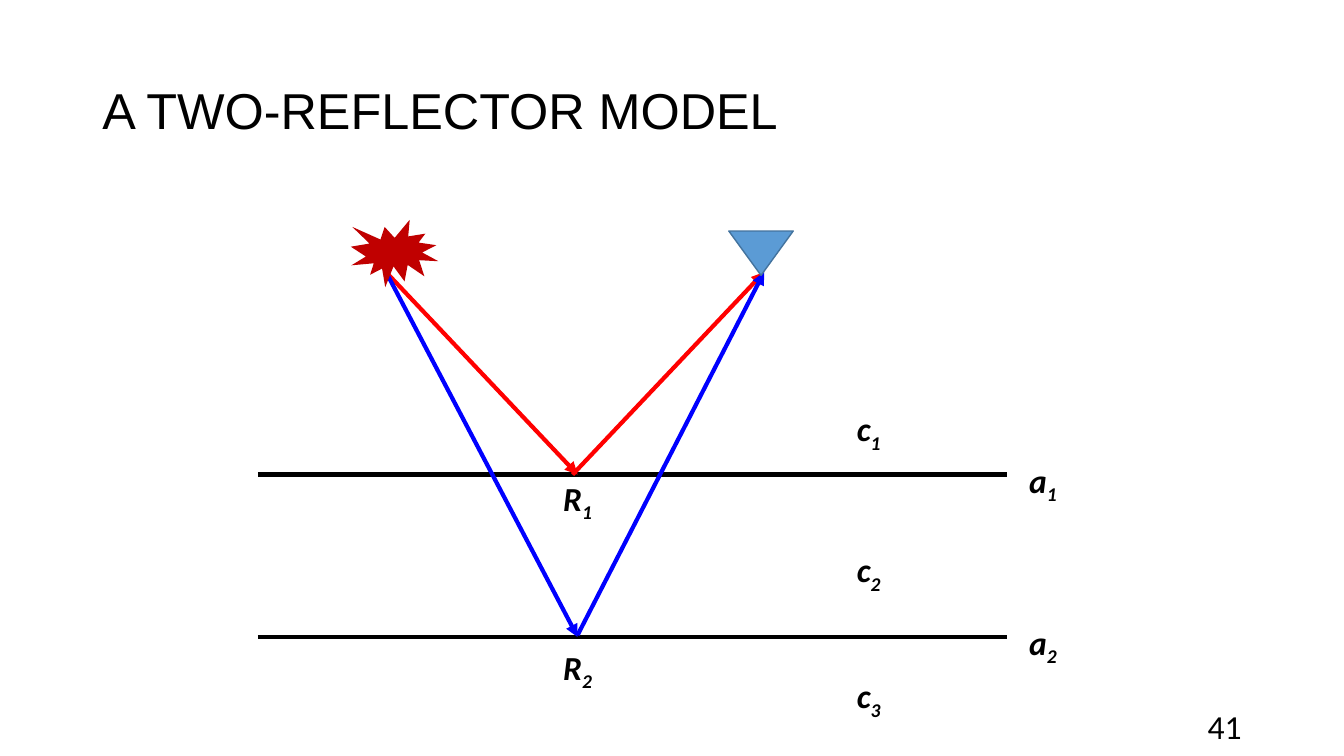
from dataclasses import dataclass

from lxml import etree
from pptx import Presentation
from pptx.dml.color import RGBColor
from pptx.enum import shapes, text
from pptx.oxml import ns
from pptx.util import Pt


@dataclass(frozen=True)
class Theme:
    ink: RGBColor = RGBColor(0, 0, 0)
    shallow_ray: RGBColor = RGBColor(0xFF, 0, 0)
    deep_ray: RGBColor = RGBColor(0, 0, 0xFF)
    source: RGBColor = RGBColor(0xC0, 0, 0)
    receiver: RGBColor = RGBColor(0x5B, 0x9B, 0xD5)
    receiver_edge: RGBColor = RGBColor(0x43, 0x73, 0x9E)
    title_font: str = "Arial"
    body_font: str = "Calibri"
    title_size: int = 36
    body_size: int = 24
    line_width: int = 3


THEME = Theme()
LABEL_WIDTH, LABEL_HEIGHT = 60.5, 36


def style_font(font, name, size):
    font.name = name
    font.size = Pt(size)
    font.color.rgb = THEME.ink


def add_line(parent, start, end, color, arrow=False):
    line = parent.shapes.add_connector(
        shapes.MSO_CONNECTOR.STRAIGHT, *(Pt(value) for value in (*start, *end)))
    line.line.color.rgb = color
    line.line.width = Pt(THEME.line_width)
    properties = line.line._get_or_add_ln()
    if arrow:
        etree.SubElement(properties, ns.qn("a:tailEnd"), type="triangle")
    etree.SubElement(properties.getparent(), ns.qn("a:effectLst"))


def add_symbol(parent, kind, box, fill):
    symbol = parent.shapes.add_shape(kind, *(Pt(value) for value in box))
    symbol.shadow.inherit = False
    symbol.fill.solid()
    symbol.fill.fore_color.rgb = fill
    return symbol


def add_label(parent, left, top, letter, index):
    label = parent.shapes.add_textbox(
        Pt(left), Pt(top), Pt(LABEL_WIDTH), Pt(LABEL_HEIGHT))
    label.text_frame.word_wrap = True
    paragraph = label.text_frame.paragraphs[0]
    paragraph.alignment = text.PP_ALIGN.CENTER
    for characters in (letter, str(index)):
        run = paragraph.add_run()
        run.text = characters
        style_font(run.font, THEME.body_font, THEME.body_size)
        run.font.bold = run.font.italic = True
    # The last run is the subscript
    run.font._element.set("baseline", "-25000")


def add_title(slide, left, top, width, height):
    title = slide.shapes.title
    title.left, title.top, title.width, title.height = (
        Pt(value) for value in (left, top, width, height))
    frame = title.text_frame
    frame.text = "A TWO-REFLECTOR MODEL"
    frame.word_wrap = True
    frame.auto_size = text.MSO_AUTO_SIZE.NONE
    frame.vertical_anchor = text.MSO_ANCHOR.MIDDLE
    paragraph = frame.paragraphs[0]
    paragraph.alignment = text.PP_ALIGN.LEFT
    paragraph.line_spacing = 0.9
    style_font(paragraph.runs[0].font, THEME.title_font, THEME.title_size)


def add_page_number(slide, left, top, width, height):
    number = slide.shapes.add_textbox(Pt(left), Pt(top), Pt(width), Pt(height))
    frame = number.text_frame
    frame.text = "41"
    frame.word_wrap = True
    paragraph = frame.paragraphs[0]
    paragraph.alignment = text.PP_ALIGN.RIGHT
    style_font(paragraph.runs[0].font, THEME.body_font, THEME.body_size)


def add_model(slide, left, top, width):
    group = slide.shapes.add_group_shape()
    upper, lower = top + 182, top + 298
    source = (left + 91.5, top + 37.4)
    receiver = (left + 361.5, top + 37.4)
    middle = left + 228.3

    # Reflectors
    for depth in (upper, lower):
        add_line(group, (left, depth), (left + width, depth), THEME.ink)

    # Rays down to each reflector and back up
    rays = [
        (THEME.shallow_ray, (middle, upper), (middle - 3.6, upper)),
        (THEME.deep_ray, (middle, lower), (middle, lower - 1.4)),
    ]
    for color, arrival, departure in rays:
        add_line(group, source, arrival, color, arrow=True)
        add_line(group, departure, receiver, color, arrow=True)

    # Source and receiver
    burst = add_symbol(group, shapes.MSO_SHAPE.EXPLOSION1,
                       (left + 66.3, top, 62.6, 48.2), THEME.source)
    burst.line.fill.background()
    triangle = add_symbol(group, shapes.MSO_SHAPE.ISOSCELES_TRIANGLE,
                          (left + 336.3, top + 8, 46, 31.7), THEME.receiver)
    triangle.rotation = 180
    triangle.line.color.rgb = THEME.receiver_edge
    triangle.line.width = Pt(1)

    # Reflection points, amplitudes and layer velocities
    label_columns = [
        ("R", 198, (180.7, 301.6)),
        ("a", 530.5, (167.7, 283.7)),
        ("c", 406, (131, 231.8, 321.8)),
    ]
    for letter, offset, depths in label_columns:
        for index, depth in enumerate(depths, start=1):
            add_label(group, left + offset, top + depth, letter, index)


def main():
    presentation = Presentation()
    presentation.slide_width = Pt(960)
    presentation.slide_height = Pt(540)
    slide = presentation.slides.add_slide(presentation.slide_layouts[5])
    add_title(slide, 66, 28.8, 828, 104.4)
    add_page_number(slide, 678, 500.4, 216, 28.8)
    add_model(slide, 184.3, 157, 535)
    presentation.save("out.pptx")


if __name__ == "__main__":
    main()
